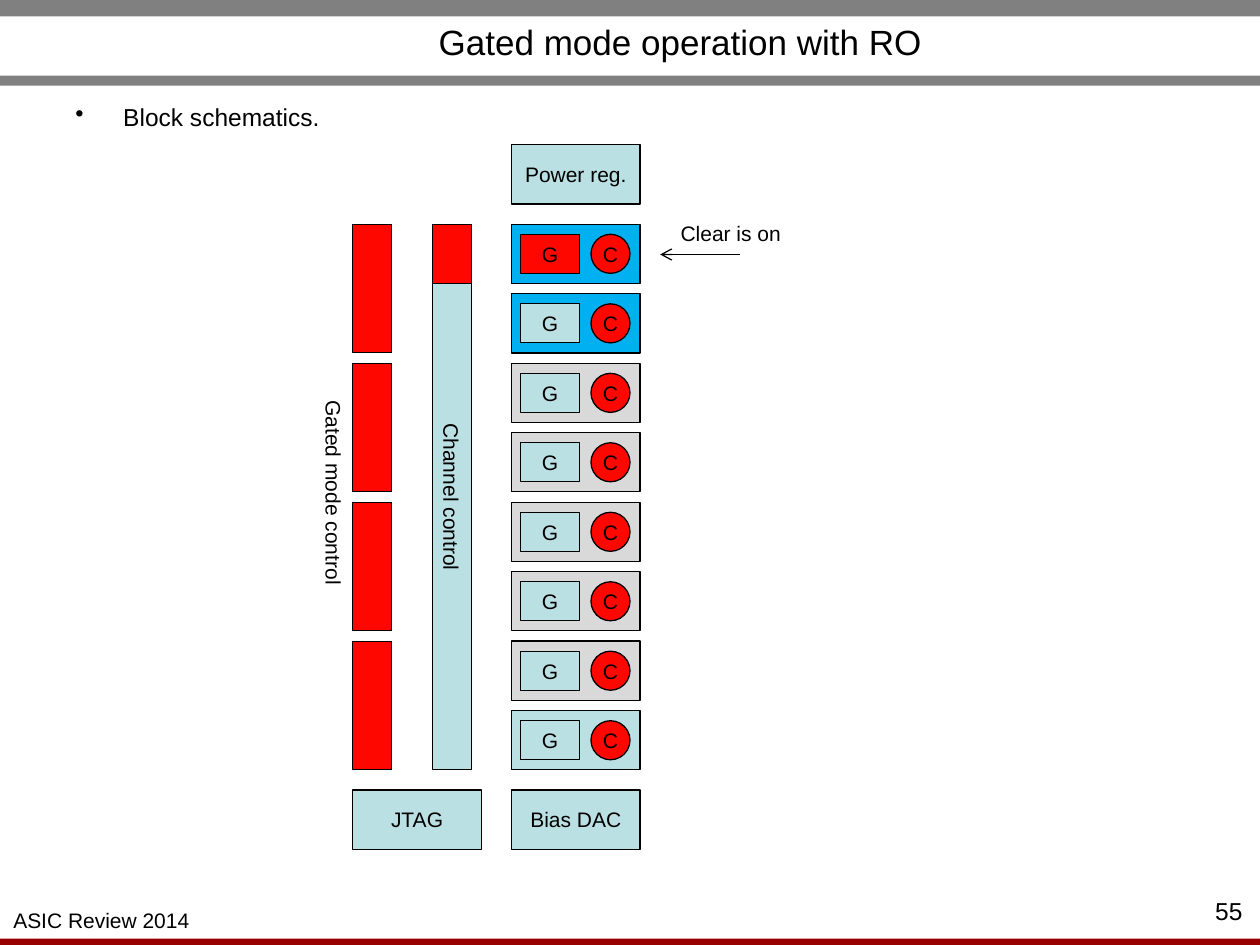
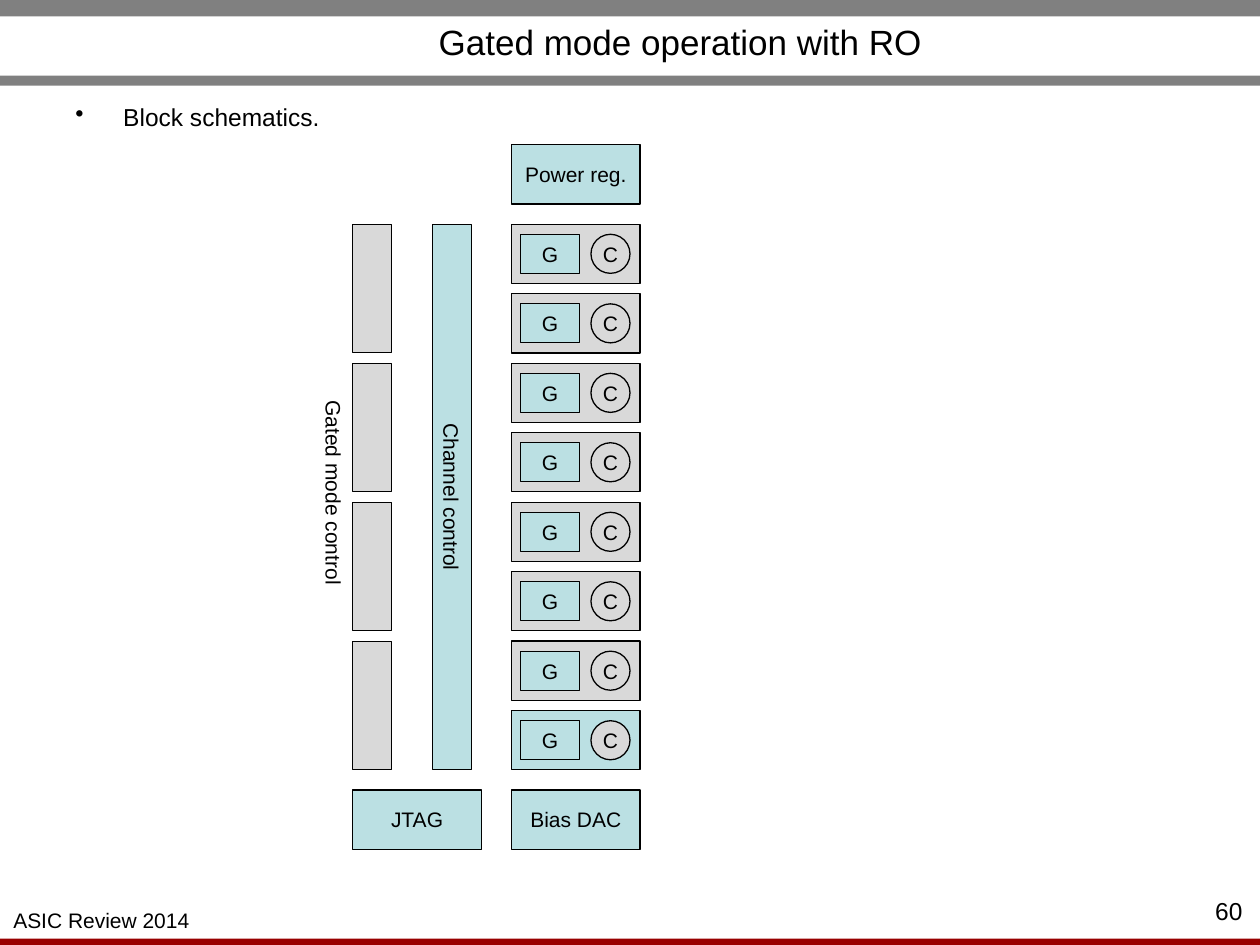
from lxml import etree
from pptx import Presentation
from pptx.dml.color import RGBColor
from pptx.enum.shapes import MSO_CONNECTOR, MSO_SHAPE
from pptx.enum.text import MSO_ANCHOR, MSO_AUTO_SIZE, PP_ALIGN
from pptx.oxml.ns import qn
from pptx.util import Inches, Pt

RECT, OVAL = MSO_SHAPE.RECTANGLE, MSO_SHAPE.OVAL
LINE = MSO_CONNECTOR.STRAIGHT
LEFT, MID, RIGHT = PP_ALIGN.LEFT, PP_ALIGN.CENTER, PP_ALIGN.RIGHT
TOP, CENTER = MSO_ANCHOR.TOP, MSO_ANCHOR.MIDDLE
FIXED = MSO_AUTO_SIZE.NONE

FONT = "Arial"
BLACK, BAND, BASE = "000000", "808080", "990000"
TEAL, GREY, BLUE, RED = "BBE0E3", "D9D9D9", "00B0F0", "FF0701"

# Grid of the schematic
ROWS, BANKS = 8, 4
GRID_TOP, GRID_END = 1.78, 6.11
CELL_W, CELL_H = 1.02, 0.47
STEP = (GRID_END - CELL_H - GRID_TOP) / (ROWS - 1)
BANK_X, CHAN_X, CELL_X = 2.8, 3.43, 4.06
BAR_W, BANK_H = 0.31, 1.02
FOOT_Y = 6.27


def color(code):
    return RGBColor.from_string(code)


class Deck:
    def __init__(self):
        self.prs = Presentation()
        self.prs.slide_width = Inches(10)
        self.prs.slide_height = Inches(7.5)
        self.slide = None

    def text(self, shape, words, size=12, align=MID, anchor=CENTER,
             wrap=False, vert=False, bullet=False):
        frame = shape.text_frame
        frame.word_wrap = wrap
        frame.auto_size = FIXED
        frame.vertical_anchor = anchor
        if vert:
            shape.element.txBody.bodyPr.set("vert", "vert")
        para = frame.paragraphs[0]
        para.text = words
        para.alignment = align
        if bullet:
            props = para._p.get_or_add_pPr()
            props.set("marL", str(Inches(0.38)))
            props.set("indent", str(-Inches(0.38)))
            etree.SubElement(props, qn("a:buChar")).set("char", "•")
        para.font.name = FONT
        para.font.size = Pt(size)
        para.font.color.rgb = color(BLACK)

    def shape(self, kind, x, y, w, h, fill, words="", edge=True, vert=False):
        item = self.slide.shapes.add_shape(
            kind, Inches(x), Inches(y), Inches(w), Inches(h))
        item.shadow.inherit = False
        item.fill.solid()
        item.fill.fore_color.rgb = color(fill)
        if edge:
            item.line.color.rgb = color(BLACK)
            item.line.width = Pt(0.75)
        else:
            item.line.fill.background()
        if words:
            self.text(item, words, vert=vert)

    def label(self, x, y, w, h, words, **style):
        box = self.slide.shapes.add_textbox(
            Inches(x), Inches(y), Inches(w), Inches(h))
        self.text(box, words, anchor=TOP, **style)

    def arrow(self, x1, y1, x2, y2):
        line = self.slide.shapes.add_connector(
            LINE, Inches(x1), Inches(y1), Inches(x2), Inches(y2))
        line.line.color.rgb = color(BLACK)
        line.line.width = Pt(0.75)
        props = line.element.spPr
        tail = etree.SubElement(props.find(qn("a:ln")), qn("a:tailEnd"))
        tail.set("type", "arrow")
        etree.SubElement(props, qn("a:effectLst"))

    def start(self, title, page):
        self.slide = self.prs.slides.add_slide(self.prs.slide_layouts[5])
        # Bands and footer
        for y, h, fill in ((7.45, 0.08, BASE), (0, 0.13, BAND), (0.6, 0.08, BAND)):
            self.shape(RECT, 0, y, 10, h, fill, edge=False)
        self.label(0, 7.15, 1.61, 0.3, "ASIC Review 2014")
        self.label(9.49, 7.06, 0.47, 0.24, page, size=14, align=RIGHT, wrap=True)
        # Title
        head = self.slide.shapes.title
        head.left, head.top = Inches(1.3), Inches(0.14)
        head.width, head.height = Inches(8.2), Inches(0.38)
        self.text(head, title, size=20, wrap=True)

    def scheme(self, cells, gates, clear):
        """Draw the chip: row fills, gate fills and the clear/bank fill."""
        self.label(0.5, 0.76, 9, 0.73, "Block schematics.", size=14,
                   align=LEFT, wrap=True, bullet=True)
        # Gated mode control banks and channel control
        for bank in range(BANKS):
            self.shape(RECT, BANK_X, GRID_TOP + 2 * bank * STEP,
                       BAR_W, BANK_H, clear)
        self.label(2.4, 3.12, 0.4, 1.58, "Gated mode control", vert=True)
        self.shape(RECT, CHAN_X, GRID_TOP, BAR_W, GRID_END - GRID_TOP, TEAL,
                   "Channel control", vert=True)
        # Channels, each with a gate and a clear switch
        for row, (cell, gate) in enumerate(zip(cells, gates)):
            y = GRID_TOP + row * STEP
            self.shape(RECT, CELL_X, y, CELL_W, CELL_H, cell)
            self.shape(RECT, CELL_X + 0.07, y + 0.08, 0.47, 0.31, gate, "G")
            self.shape(OVAL, CELL_X + 0.63, y + 0.08, 0.31, 0.31, clear, "C")
        # Service blocks
        for x, y, name in ((CELL_X, 1.15, "Power reg."),
                           (BANK_X, FOOT_Y, "JTAG"),
                           (CELL_X, FOOT_Y, "Bias DAC")):
            self.shape(RECT, x, y, CELL_W, CELL_H, TEAL, name)


def main():
    deck = Deck()
    title = "Gated mode operation with RO"

    # Clear active, first channel selected
    deck.start(title, "55")
    deck.scheme([BLUE] * 2 + [GREY] * 5 + [TEAL],
                [RED] + [TEAL] * (ROWS - 1), RED)
    deck.shape(RECT, CHAN_X, GRID_TOP, BAR_W, CELL_H, RED)
    deck.arrow(5.87, 2.02, 5.24, 2.02)
    deck.label(5.3, 1.7, 1, 0.3, "Clear is on")

    # Idle state
    deck.start(title, "60")
    deck.scheme([GREY] * (ROWS - 1) + [TEAL], [TEAL] * ROWS, GREY)

    deck.prs.save("out.pptx")


if __name__ == "__main__":
    main()
